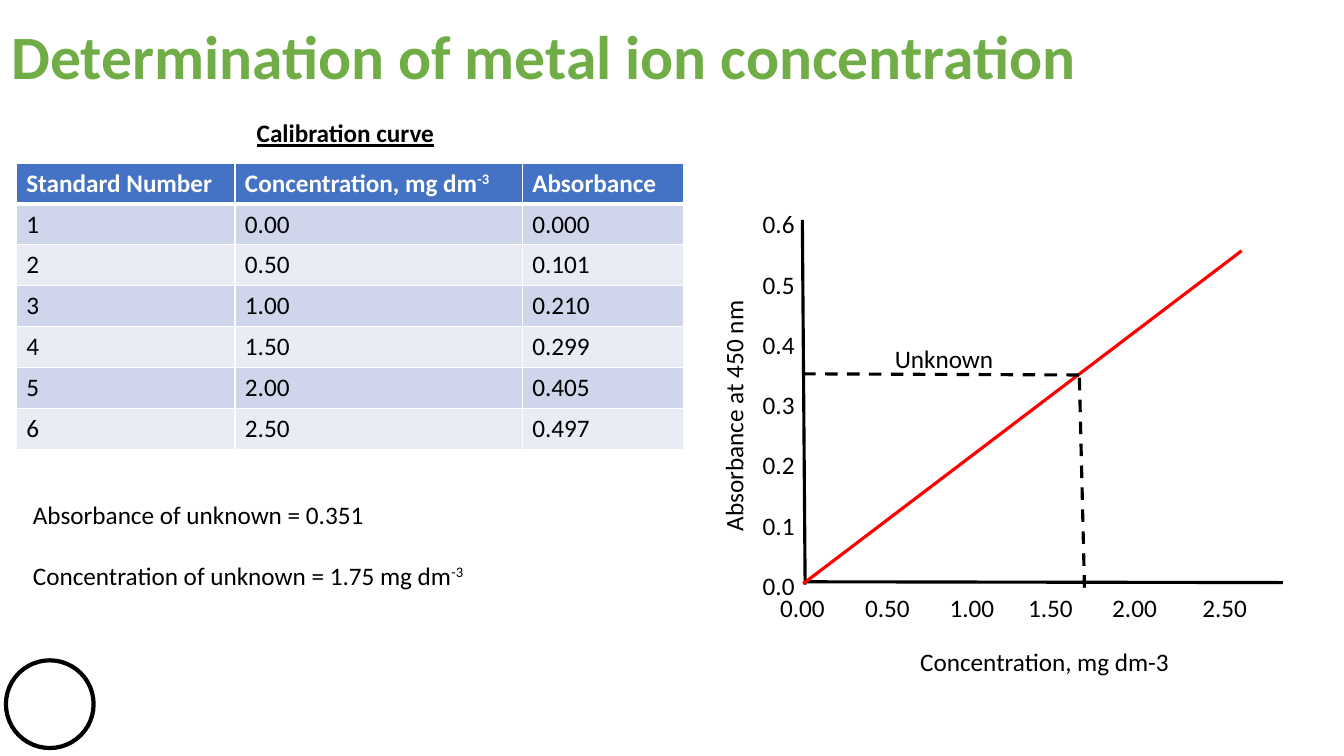
from lxml import etree
from pptx import Presentation
from pptx.dml.color import RGBColor
from pptx.enum.dml import MSO_LINE
from pptx.enum.shapes import MSO_CONNECTOR, MSO_SHAPE
from pptx.enum.text import MSO_ANCHOR, MSO_AUTO_SIZE, PP_ALIGN
from pptx.oxml.ns import qn
from pptx.util import Cm, Pt

STRAIGHT, OVAL, DASH = MSO_CONNECTOR.STRAIGHT, MSO_SHAPE.OVAL, MSO_LINE.DASH
TOP, LEFT, NO_FIT = MSO_ANCHOR.TOP, PP_ALIGN.LEFT, MSO_AUTO_SIZE.NONE
BLACK, WHITE, RED, GREEN = "000000", "FFFFFF", "FF0000", "70AD47"
HEADER, BAND_DARK, BAND_LIGHT = "4472C4", "CFD5EA", "E9EBF5"
rgb = RGBColor.from_string


def add_runs(p, text, color=BLACK, size=18, bold=False, underline=False):
    """Write text into a paragraph; what follows a ^ is superscript."""
    for i, part in enumerate(text.split("^")):
        r = p.add_run()
        r.text = part
        r.font.name = "Calibri"
        r.font.size = Pt(size)
        r.font.bold = bold
        r.font.underline = underline
        r.font.color.rgb = rgb(color)
        if i:
            r._r.get_or_add_rPr().set("baseline", "30000")


def add_text(x, y, w, h, lines, gap=0, **style):
    sp = s.shapes.add_textbox(Cm(x), Cm(y), Cm(w), Cm(h))
    tf = sp.text_frame
    tf.word_wrap = True
    for i, line in enumerate(lines):
        p = tf.add_paragraph() if i else tf.paragraphs[0]
        p.space_before = Pt(gap if i else 0)
        add_runs(p, line, **style)
    return sp


prs = Presentation()
prs.slide_width, prs.slide_height = Cm(33.87), Cm(19.05)
s = prs.slides.add_slide(prs.slide_layouts[5])

# Title
title = s.shapes.title
title.left, title.top, title.width, title.height = Cm(0.03), Cm(0.33), Cm(33.84), Cm(2.14)
tf = title.text_frame
tf.word_wrap, tf.auto_size, tf.vertical_anchor = True, NO_FIT, TOP
tf.paragraphs[0].alignment = LEFT
add_runs(tf.paragraphs[0], "Determination of metal ion concentration", GREEN, 44, bold=True)

# Ring in the corner
ring = s.shapes.add_shape(OVAL, Cm(0.15), Cm(16.64), Cm(2.21), Cm(2.21))
ring.shadow.inherit = False
ring.fill.solid()
ring.fill.fore_color.rgb = rgb(WHITE)
ring.line.color.rgb = rgb(BLACK)
ring.line.width = Pt(3)

# Calibration table
add_text(6.22, 2.84, 5.16, 1.02, ["Calibration curve"], bold=True, underline=True)
rows = [
    ("Standard Number", "Concentration, mg dm^-3", "Absorbance"),
    ("1", "0.00", "0.000"),
    ("2", "0.50", "0.101"),
    ("3", "1.00", "0.210"),
    ("4", "1.50", "0.299"),
    ("5", "2.00", "0.405"),
    ("6", "2.50", "0.497"),
]
widths = (5.51, 7.24, 4.06)
table = s.shapes.add_table(len(rows), len(widths), Cm(0.41), Cm(4.11),
                           Cm(sum(widths)), Cm(1.03 * len(rows))).table
for col, width in zip(table.columns, widths):
    col.width = Cm(width)
for i, row in enumerate(rows):
    table.rows[i].height = Cm(1.03)
    for j, text in enumerate(row):
        cell = table.cell(i, j)
        add_runs(cell.text_frame.paragraphs[0], text, BLACK if i else WHITE, bold=i == 0)
        tcPr = cell._tc.get_or_add_tcPr()
        for side in ("lnL", "lnR", "lnT", "lnB"):
            heavy = (i, side) in ((0, "lnB"), (1, "lnT"))
            ln = etree.SubElement(tcPr, qn("a:" + side), w=str(Pt(3 if heavy else 1)))
            fill = etree.SubElement(ln, qn("a:solidFill"))
            etree.SubElement(fill, qn("a:srgbClr"), val=WHITE)
        cell.fill.solid()
        band = BAND_DARK if i % 2 else BAND_LIGHT
        cell.fill.fore_color.rgb = rgb(band if i else HEADER)

# Result for the unknown
add_text(0.58, 12.45, 14, 2.57, ["Absorbance of unknown = 0.351",
                                 "Concentration of unknown = 1.75 mg dm^-3"], gap=22)

# Axes, calibration line and dashed reading of the unknown
lines = [
    (20.22, 5.54, 20.29, 14.73, BLACK, False),
    (32.33, 14.68, 20.32, 14.66, BLACK, False),
    (31.29, 6.32, 20.24, 14.71, RED, False),
    (20.24, 9.42, 27.25, 9.45, BLACK, True),
    (27.33, 14.81, 27.2, 9.45, BLACK, True),
]
for x1, y1, x2, y2, color, dashed in lines:
    line = s.shapes.add_connector(STRAIGHT, Cm(x1), Cm(y1), Cm(x2), Cm(y2))
    line.line.color.rgb = rgb(color)
    line.line.width = Pt(2.25)
    if dashed:
        line.line.dash_style = DASH
    etree.SubElement(line._element.spPr, qn("a:effectLst"))
add_text(22.3, 8.53, 3.56, 1.02, ["Unknown"])

# Axis titles
y_title = add_text(14.99, 9.63, 6.99, 1.02, ["Absorbance at 450 nm"])
y_title.rotation = 270
add_text(22.94, 16.15, 8.2, 1.02, ["Concentration, mg dm-3"])

# Axis values: y spaced by paragraph, x by tab stops
add_text(18.97, 5.13, 3.23, 11.02, [f"{n / 10:.1f}" for n in range(6, -1, -1)], gap=21.5)
x_values = add_text(19.41, 14.81, 12.9, 1.02, [""])
p = x_values.text_frame.paragraphs[0]
tabs = etree.SubElement(p._p.get_or_add_pPr(), qn("a:tabLst"))
for stop in (2.14, 4.27, 6.25, 8.37, 10.64):
    etree.SubElement(tabs, qn("a:tab"), pos=str(Cm(stop)), algn="l")
p.runs[0].text = "\t".join(f"{n / 2:.2f}" for n in range(6))

prs.save("out.pptx")
